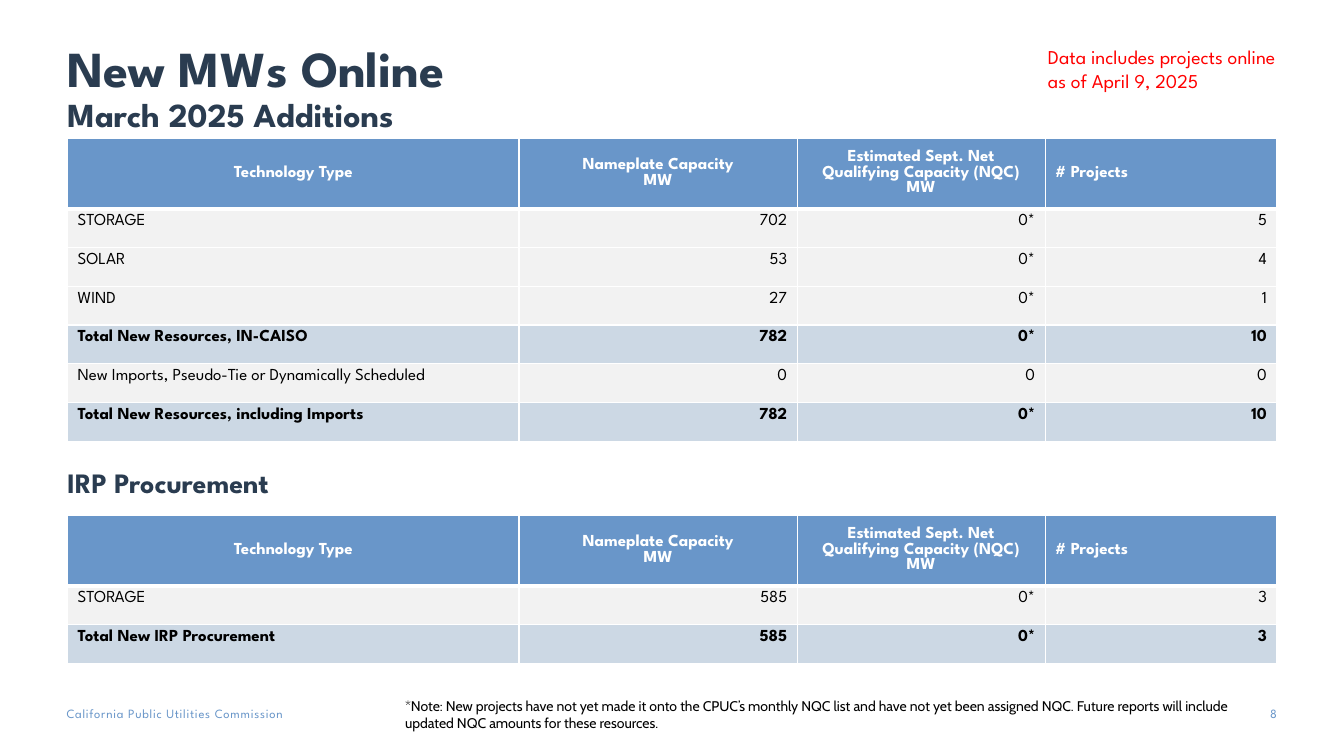
import copy

import pptx
import pptx.dml.color
import pptx.enum.text
import pptx.oxml
import pptx.oxml.ns
import pptx.util

PX = 4572
NAVY = pptx.dml.color.RGBColor(0x2A, 0x3C, 0x50)
BLUE = pptx.dml.color.RGBColor(0x69, 0x96, 0xC9)
PALE_BLUE = pptx.dml.color.RGBColor(0xCC, 0xD8, 0xE4)
PALE_GRAY = pptx.dml.color.RGBColor(0xF2, 0xF2, 0xF2)
WHITE = pptx.dml.color.RGBColor(0xFF, 0xFF, 0xFF)
BLACK = pptx.dml.color.RGBColor(0, 0, 0)
RED = pptx.dml.color.RGBColor(0xFF, 0, 0)
HEADING_FONT = "League Spartan"
NOTE_FONT = "Cabin"
LEFT = pptx.enum.text.PP_ALIGN.LEFT
CENTER = pptx.enum.text.PP_ALIGN.CENTER
RIGHT = pptx.enum.text.PP_ALIGN.RIGHT
TOP = pptx.enum.text.MSO_ANCHOR.TOP
MIDDLE = pptx.enum.text.MSO_ANCHOR.MIDDLE
BOTTOM = pptx.enum.text.MSO_ANCHOR.BOTTOM

COLUMN_WIDTHS = [896, 552, 492, 460]
ROW_HEIGHT = 77
HEADERS = [
    "Technology Type",
    "Nameplate Capacity\nMW",
    "Estimated Sept. Net Qualifying Capacity (NQC) MW",
    "# Projects",
]
ADDITIONS = [
    ("STORAGE", "702", "0*", "5"),
    ("SOLAR", "53", "0*", "4"),
    ("WIND", "27", "0*", "1"),
    ("Total New Resources, IN-CAISO", "782", "0*", "10"),
    ("New Imports, Pseudo-Tie or Dynamically Scheduled", "0", "0", "0"),
    ("Total New Resources, including Imports", "782", "0*", "10"),
]
PROCUREMENT = [
    ("STORAGE", "585", "0*", "3"),
    ("Total New IRP Procurement", "585", "0*", "3"),
]
NOTE = (
    "*Note:\u00a0New projects have not yet made it onto the CPUC’s monthly NQC list "
    "and have not yet been assigned NQC. Future\u00a0reports will include updated "
    "NQC amounts for these resources."
)


def write_text(paragraph, text, size, color, font=HEADING_FONT, bold=False,
               align=LEFT, line_spacing=None, tracking=None):
    """Add formatted text to a paragraph, with a line break at each newline."""
    paragraph.alignment = align
    if line_spacing:
        paragraph.line_spacing = line_spacing
    properties = None
    for index, line in enumerate(text.split("\n")):
        if index:
            paragraph.add_line_break()
            paragraph._p[-1].append(copy.deepcopy(properties))
        if not line:
            continue
        run = paragraph.add_run()
        run.text = line
        run.font.name = font
        run.font.size = pptx.util.Pt(size)
        run.font.bold = bold
        run.font.color.rgb = color
        properties = run._r.get_or_add_rPr()
        if tracking:
            properties.set("spc", str(tracking))


def add_text_box(slide, box, margins=(20, 10, 20, 10), anchor=TOP):
    """Add a wrapping text box and return its first paragraph."""
    shape = slide.shapes.add_textbox(*(length * PX for length in box))
    frame = shape.text_frame
    frame.word_wrap = True
    frame.vertical_anchor = anchor
    frame.margin_left, frame.margin_top, frame.margin_right, frame.margin_bottom = (
        margin * PX for margin in margins)
    return frame.paragraphs[0]


def add_heading(slide, box, lines):
    """Place bottom-anchored heading lines, given as text and size pairs."""
    paragraph = add_text_box(slide, box, margins=(0, 10, 20, 10), anchor=BOTTOM)
    for text, size in lines:
        write_text(paragraph, text, size, NAVY, bold=True, line_spacing=0.9)


def set_borders(cell, top, bottom):
    """Give a cell white borders, with top and bottom widths in points."""
    properties = cell._tc.get_or_add_tcPr()
    for side, width in (("L", 1), ("R", 1), ("T", top), ("B", bottom)):
        properties.append(pptx.oxml.parse_xml(
            f'<a:ln{side} {pptx.oxml.ns.nsdecls("a")} w="{pptx.util.Pt(width)}">'
            f'<a:solidFill><a:srgbClr val="{WHITE}"/></a:solidFill></a:ln{side}>'))


def add_capacity_table(slide, box, rows):
    """Fill the box with a header row and body rows, shading the totals."""
    left, top, width, height = box
    table = slide.shapes.add_table(
        len(rows) + 1, len(HEADERS), left * PX, top * PX, width * PX, height * PX).table
    for column, column_width in zip(table.columns, COLUMN_WIDTHS):
        column.width = column_width * PX
    for row in table.rows:
        row.height = ROW_HEIGHT * PX
    table.rows[0].height = (height - ROW_HEIGHT * len(rows)) * PX
    for row_index, values in enumerate([HEADERS, *rows]):
        is_header = row_index == 0
        is_total = values[0].startswith("Total")
        for column_index, value in enumerate(values):
            cell = table.cell(row_index, column_index)
            set_borders(cell, top=3 if row_index == 1 else 1, bottom=3 if is_header else 1)
            cell.fill.solid()
            cell.fill.fore_color.rgb = BLUE if is_header else PALE_BLUE if is_total else PALE_GRAY
            cell.vertical_anchor = MIDDLE if is_header else TOP
            if is_header:
                align = LEFT if value == HEADERS[-1] else CENTER
            else:
                align = RIGHT if column_index else LEFT
            write_text(cell.text_frame.paragraphs[0], value, 12,
                       WHITE if is_header else BLACK,
                       bold=is_header or is_total, align=align)


def add_footer(slide, box):
    """Place the agency name, the note and the page number in the footer."""
    left, top, width, height = box
    agency = add_text_box(slide, (left, top + 26, 642, 30), margins=(0, 0, 0, 0))
    write_text(agency, "California Public Utilities Commission", 9, BLUE, tracking=50)
    note = add_text_box(slide, (left + 652, top, width - 652, height))
    write_text(note, NOTE, 10, BLACK, font=NOTE_FONT)
    number = add_text_box(slide, (left + width - 84, top + 26, 84, 40), margins=(0, 0, 0, 0))
    write_text(number, "8", 9, BLUE, align=RIGHT)


def build_online_slide(presentation):
    """Build the slide of new megawatts online."""
    slide = presentation.slides.add_slide(presentation.slide_layouts[6])
    add_heading(slide, (134, -12, 2400, 290),
                [("New MWs Online\n", 36), ("March 2025 Additions", 24)])
    add_capacity_table(slide, (134, 274, 2400, 598), ADDITIONS)
    date_note = add_text_box(slide, (2060, 80, 600, 176))
    write_text(date_note, "Data includes projects online\nas of April 9, 2025", 14, RED)
    add_heading(slide, (134, 712, 2400, 290), [("IRP Procurement", 20)])
    add_capacity_table(slide, (134, 1022, 2400, 292), PROCUREMENT)
    add_footer(slide, (132, 1374, 2402, 126))


def main():
    """Create and save the presentation."""
    presentation = pptx.Presentation()
    presentation.slide_width = 2667 * PX
    presentation.slide_height = 1500 * PX
    build_online_slide(presentation)
    presentation.save("out.pptx")


if __name__ == "__main__":
    main()
